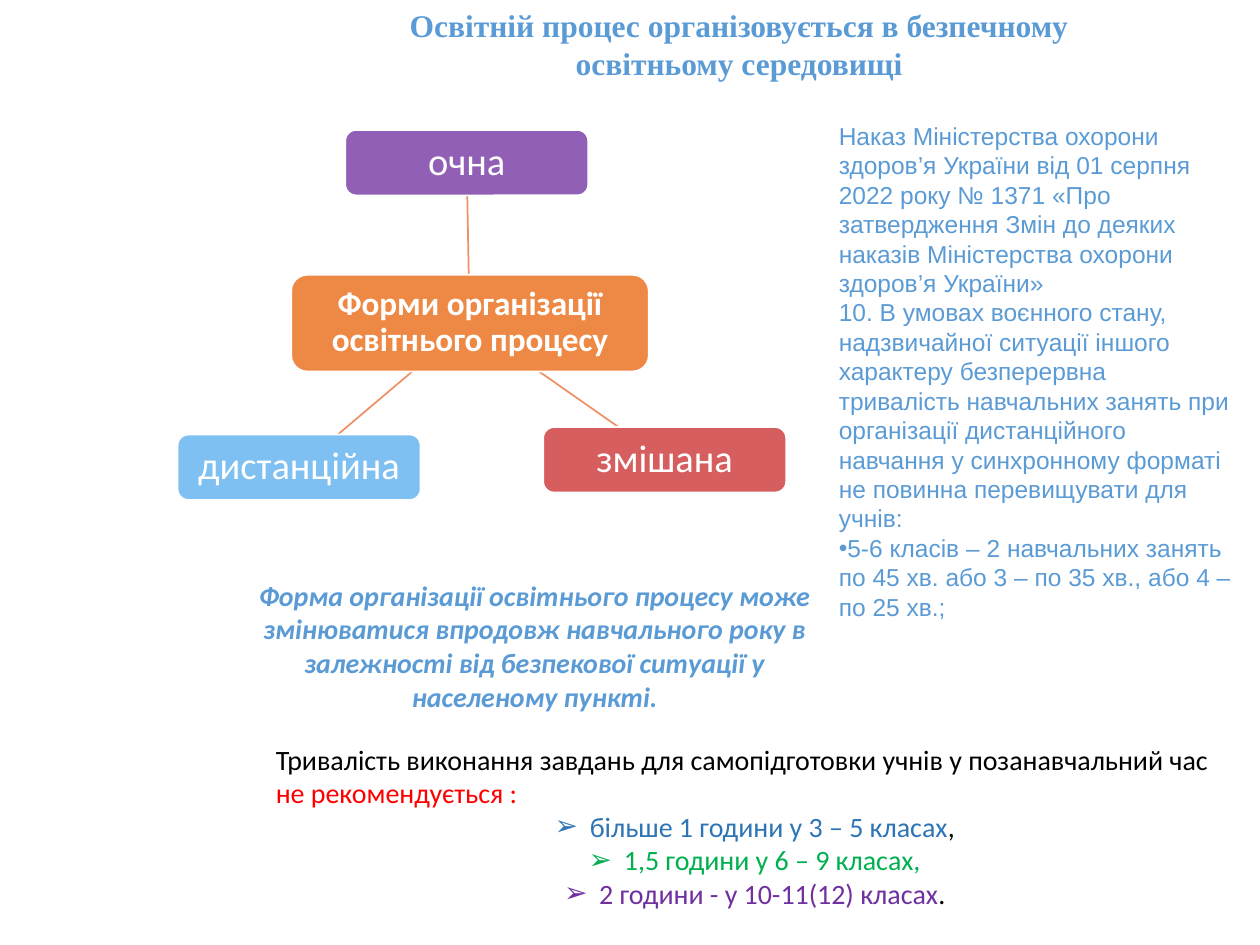
import pptx
import pptx.util
import pptx.dml.color
import pptx.enum.shapes
import pptx.enum.text
import pptx.oxml
import pptx.oxml.ns
import lxml.etree

Cm, Pt = pptx.util.Cm, pptx.util.Pt
Align = pptx.enum.text.PP_ALIGN
Anchor = pptx.enum.text.MSO_ANCHOR
qn = pptx.oxml.ns.qn
rgb = pptx.dml.color.RGBColor.from_string
BLUE, WHITE, BLACK = "5B9BD5", "FFFFFF", "000000"


def write(frame, paras, style, align, inset=(0.25, 0.13), anchor=Anchor.TOP):
    """Fill a frame; each paragraph is (bullet, indent, align, runs)."""
    side, edge = (Cm(x) for x in inset)
    setup = dict(word_wrap=True, auto_size=pptx.enum.text.MSO_AUTO_SIZE.NONE,
                 vertical_anchor=anchor, margin_left=side, margin_right=side,
                 margin_top=edge, margin_bottom=edge)
    for key, val in setup.items():
        setattr(frame, key, val)
    for i, (mark, indent, own, runs) in enumerate(paras):
        para = frame.paragraphs[0] if i == 0 else frame.add_paragraph()
        para.alignment = own or align
        if mark:
            props = para._p.get_or_add_pPr()
            props.set("marL", str(Cm(indent)))
            props.set("indent", str(-Cm(indent)))
            font = lxml.etree.SubElement(props, qn("a:buFont"))
            font.set("typeface", "Arial")
            lxml.etree.SubElement(props, qn("a:buChar")).set("char", mark)
        for text, color in runs:
            run = para.add_run()
            run.text = text
            run.font.color.rgb = rgb(color)
            for key, val in style.items():
                setattr(run.font, key, val)


def plain(text, color=BLUE, mark=None):
    return (mark, 0, None, [(text, color)])


deck = pptx.Presentation()
deck.slide_width, deck.slide_height = Cm(25.4), Cm(19.05)
slide = deck.slides.add_slide(deck.slide_layouts[5])
shapes = slide.shapes

# Title
title = shapes.title
place = dict(left=Cm(5.1), top=Cm(0), width=Cm(19.6), height=Cm(2.3))
for key, val in place.items():
    setattr(title, key, val)
write(title.text_frame,
      [plain("Освітній процес організовується в безпечному"),
       plain("освітньому середовищі")],
      dict(name="Times New Roman", size=Pt(18), bold=True), Align.CENTER)

# Links from the centre to each form
for x1, y1, x2, y2 in [(9.45, 5.54, 9.42, 3.94),
                       (10.87, 7.49, 12.47, 8.61),
                       (8.31, 7.49, 6.81, 8.76)]:
    link = shapes.add_connector(pptx.enum.shapes.MSO_CONNECTOR.STRAIGHT,
                                Cm(x1), Cm(y1), Cm(x2), Cm(y2))
    link.line.color.rgb = rgb("EF9166")
    link.line.width = Pt(1)
    lxml.etree.SubElement(link._element.spPr, qn("a:effectLst"))

# Centre and three forms of study
big = dict(name="Calibri", size=Pt(19), bold=True)
small = dict(name="Calibri", size=Pt(22))
for text, x, y, w, h, color, alpha, style in [
        ("Форми організації освітнього процесу",
         5.87, 5.54, 7.21, 1.95, "ED7D31", 90, big),
        ("очна", 6.96, 2.62, 4.9, 1.32, "7030A0", 77, small),
        ("змішана", 10.95, 8.61, 4.9, 1.32, "C00000", 63, small),
        ("дистанційна", 3.58, 8.76, 4.9, 1.32, "0083E6", 50, small)]:
    box = shapes.add_shape(pptx.enum.shapes.MSO_SHAPE.ROUNDED_RECTANGLE,
                           Cm(x), Cm(y), Cm(w), Cm(h))
    box.shadow.inherit = False
    box.fill.solid()
    box.fill.fore_color.rgb = rgb(color)
    tint = box._element.spPr.find(".//" + qn("a:srgbClr"))
    lxml.etree.SubElement(tint, qn("a:alpha")).set("val", str(alpha * 1000))
    box.line.color.rgb = rgb(WHITE)
    box.line.width = Pt(1)
    write(box.text_frame, [plain(text, WHITE)], style, Align.CENTER,
          (0.15, 0.15), Anchor.MIDDLE)
    box.text_frame.paragraphs[0].line_spacing = 0.9

# Order of the ministry, note and homework limits
order = [
    plain("Наказ Міністерства охорони здоров’я України від 01 серпня 2022 року "
          "№ 1371 «Про затвердження Змін до деяких наказів Міністерства "
          "охорони здоров’я України»"),
    plain("10. В умовах воєнного стану, надзвичайної ситуації іншого характеру "
          "безперервна тривалість навчальних занять при організації "
          "дистанційного навчання у синхронному форматі не повинна "
          "перевищувати для учнів:"),
    plain("5-6 класів – 2 навчальних занять по 45 хв. або 3 – по 35 хв., "
          "або 4 – по 25 хв.;", mark="•")]
note = [plain("Форма організації освітнього процесу може змінюватися впродовж "
              "навчального року в залежності від безпекової ситуації у "
              "населеному пункті.")]
limits = [(None, 0, None, [
    ("Тривалість виконання завдань для самопідготовки учнів у "
     "позанавчальний час ", BLACK), ("не рекомендується :", "FF0000")])]
for text, color, end, shade in [
        ("більше 1 години у 3 – 5 класах", "2E75B6", ",", BLACK),
        ("1,5 години у 6 – 9 класах", "00B050", ",", "00B050"),
        ("2 години - у 10-11(12) класах", "7030A0", ".", BLACK)]:
    limits.append(("➢", 0.71, Align.CENTER, [(text, color), (end, shade)]))

for paras, x, y, w, h, style, align in [
        (order, 16.66, 2.31, 8.46, 9.83,
         dict(name="Arial", size=Pt(14)), Align.LEFT),
        (note, 4.9, 11.53, 11.76, 3,
         dict(name="Calibri", size=Pt(16), bold=True, italic=True),
         Align.CENTER),
        (limits, 5.31, 14.83, 19.81, 3.68,
         dict(name="Calibri", size=Pt(16)), Align.LEFT)]:
    area = shapes.add_textbox(Cm(x), Cm(y), Cm(w), Cm(h))
    write(area.text_frame, paras, style, align)

deck.save("out.pptx")
